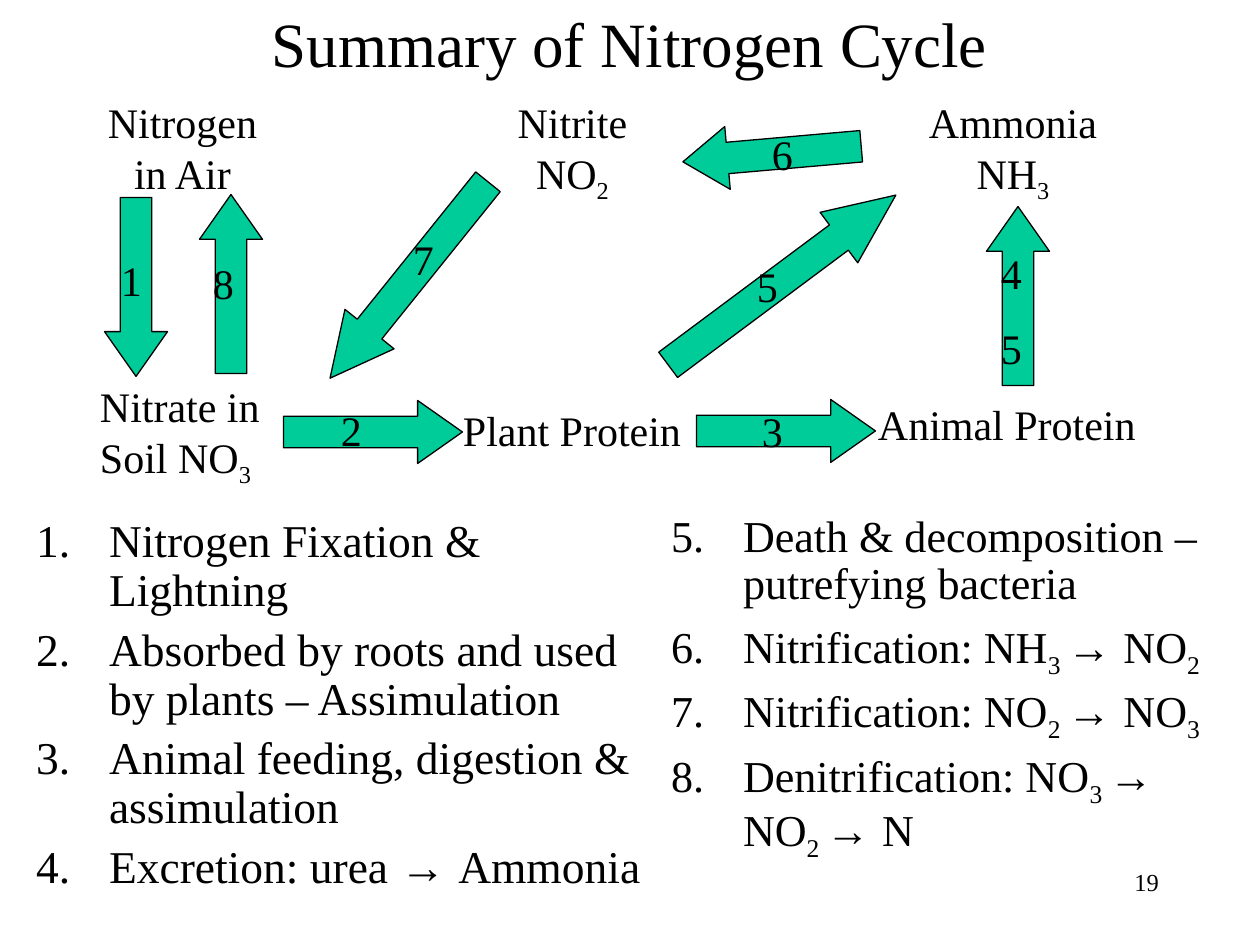
import pptx
import pptx.util
import pptx.dml.color
import pptx.enum.shapes
import pptx.enum.text
from dataclasses import dataclass
from lxml import etree

PX = 914400 / 126
ALIGN = pptx.enum.text.PP_ALIGN
AUTO_SIZE = pptx.enum.text.MSO_AUTO_SIZE
ANCHOR = pptx.enum.text.MSO_ANCHOR


@dataclass(frozen=True)
class Theme:
    ink: str = "000000"
    arrow: str = "00CC99"
    font: str = "Times New Roman"
    symbol_font: str = "Arial"
    title: float = 36
    label: float = 24
    page: float = 14
    inset: int = 6


THEME = Theme()

# Content: ~ marks enclose subscripts; boxes are left, top, width, height in px
TITLE = "Summary of Nitrogen Cycle"
TITLE_BOX = (94, 0, 1071, 84)
LISTS = [
    {"box": (30, 512, 620, 462), "start": 1, "size": 26, "indent": 73, "items": [
        "Nitrogen Fixation & Lightning",
        "Absorbed by roots and used by plants – Assimulation",
        "Animal feeding, digestion & assimulation",
        "Excretion: urea → Ammonia"]},
    {"box": (665, 508, 567, 462), "start": 5, "size": 25.2, "indent": 72, "items": [
        "Death & decomposition – putrefying bacteria",
        "Nitrification: NH~3 ~→ NO~2~",
        "Nitrification: NO~2 ~→ NO~3~",
        "Denitrification: NO~3 ~→ NO~2 ~→ N"]},
]
COMPOUNDS = [
    ("Nitrogen in Air", (83, 91, 199, 106), ALIGN.CENTER),
    ("Nitrite NO~2~", (483, 91, 179, 113), ALIGN.CENTER),
    ("Ammonia NH~3~", (892, 91, 242, 113), ALIGN.CENTER),
    ("Nitrate in Soil NO~3~", (94, 375, 189, 113), ALIGN.LEFT),
    ("Plant Protein", (457, 398, 262, 58), ALIGN.LEFT),
    ("Animal Protein", (872, 392, 305, 58), ALIGN.LEFT),
]
# Arrow centre x, centre y, length, rotation
ARROW_WIDTH = 63
ARROWS = [
    (373, 432, 179, 0), (786, 431, 179, 0), (136, 287, 179, 90),
    (1018, 296, 179, 270), (772, 154, 179, 175), (409, 280, 252, 128.8),
    (231, 284, 179, 270), (782, 280, 284, 323.3),
]
# Step numbers with left, top
STEP_WIDTH, STEP_HEIGHT, STEP_PITCH = 53, 58, 73
STEPS = [
    (["1"], 115, 248), (["2"], 335, 398), (["3"], 756, 399),
    (["4", "5"], 995, 242), (["5"], 751, 255), (["6"], 766, 122),
    (["7"], 407, 227), (["8"], 207, 251),
]
PAGE_NUMBER, PAGE_BOX = "19", (1126, 861, 39, 39)


def emu(px):
    return pptx.util.Emu(round(px * PX))


def color(value):
    return pptx.dml.color.RGBColor.from_string(value)


def place(shape, box):
    shape.left, shape.top, shape.width, shape.height = map(emu, box)


def add_runs(paragraph, text):
    for index, part in enumerate(text.split("~")):
        for piece in part.partition("→ "):
            if not piece:
                continue
            run = paragraph.add_run()
            run.text = piece
            if index % 2:
                run.font._element.set("baseline", "-25000")
            if piece == "→ ":
                run.font.name = THEME.symbol_font


def number(paragraph, start, indent):
    properties = paragraph._p.get_or_add_pPr()
    properties.set("marL", str(emu(indent)))
    properties.set("indent", str(-emu(indent)))
    bullet = etree.SubElement(properties, pptx.oxml.ns.qn("a:buAutoNum"))
    bullet.set("type", "arabicPeriod")
    bullet.set("startAt", str(start))


def fill_text(shape, lines, size, align=ALIGN.LEFT, gap=0, wrap=True,
              auto_size=AUTO_SIZE.NONE, anchor=ANCHOR.TOP, start=None, indent=0):
    frame = shape.text_frame
    frame.word_wrap = wrap
    frame.auto_size = auto_size
    frame.vertical_anchor = anchor
    frame.margin_left = frame.margin_right = emu(THEME.inset)
    frame.margin_top = frame.margin_bottom = emu(THEME.inset)
    for index, line in enumerate(lines):
        paragraph = frame.add_paragraph() if index else frame.paragraphs[0]
        paragraph.alignment = align
        paragraph.space_before = pptx.util.Pt(gap if index else 0)
        if start:
            paragraph.line_spacing = 0.9
            number(paragraph, start, indent)
        add_runs(paragraph, line)
        paragraph.font.name = THEME.font
        paragraph.font.size = pptx.util.Pt(size)
        paragraph.font.color.rgb = color(THEME.ink)


def add_label(slide, lines, box, size=THEME.label, **options):
    shape = slide.shapes.add_textbox(*map(emu, box))
    fill_text(shape, lines, size, auto_size=AUTO_SIZE.SHAPE_TO_FIT_TEXT, **options)


def add_arrow(slide, center_x, center_y, length, rotation):
    box = (center_x - length / 2, center_y - ARROW_WIDTH / 2, length, ARROW_WIDTH)
    shape = slide.shapes.add_shape(
        pptx.enum.shapes.MSO_SHAPE.RIGHT_ARROW, *map(emu, box))
    shape.adjustments[0] = 0.5
    shape.adjustments[1] = length / 4 / ARROW_WIDTH  # head is a quarter of the length
    shape.rotation = rotation
    shape.shadow.inherit = False
    shape.fill.solid()
    shape.fill.fore_color.rgb = color(THEME.arrow)
    shape.line.color.rgb = color(THEME.ink)
    shape.line.width = pptx.util.Pt(0.75)


def main():
    presentation = pptx.Presentation()
    presentation.slide_width, presentation.slide_height = emu(1260), emu(945)
    slide = presentation.slides.add_slide(presentation.slide_layouts[3])
    title, *bodies = slide.placeholders

    # Title and numbered lists
    place(title, TITLE_BOX)
    fill_text(title, [TITLE], THEME.title, ALIGN.CENTER, anchor=ANCHOR.MIDDLE)
    for body, content in zip(bodies, LISTS):
        place(body, content["box"])
        fill_text(body, content["items"], content["size"], gap=6,
                  start=content["start"], indent=content["indent"])

    # Cycle diagram
    for text, box, align in COMPOUNDS:
        add_label(slide, [text], box, align=align)
    for arrow in ARROWS:
        add_arrow(slide, *arrow)
    for lines, left, top in STEPS:
        height = STEP_HEIGHT + STEP_PITCH * (len(lines) - 1)
        add_label(slide, lines, (left, top, STEP_WIDTH, height), gap=14)

    # Page number
    add_label(slide, [PAGE_NUMBER], PAGE_BOX, THEME.page, align=ALIGN.RIGHT, wrap=False)
    presentation.save("out.pptx")


if __name__ == "__main__":
    main()
